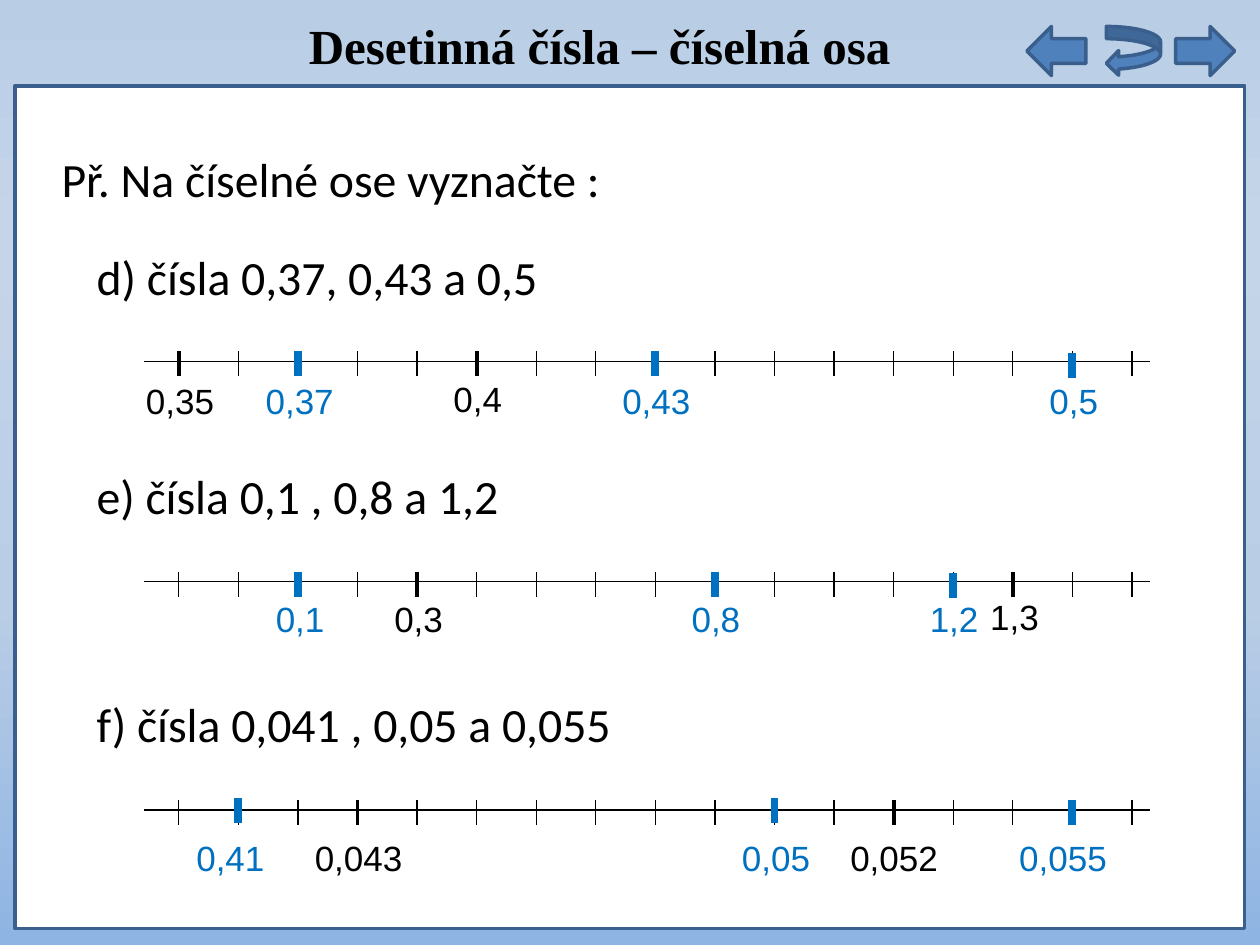
from typing import NamedTuple

from lxml.etree import SubElement
from pptx import Presentation
from pptx.dml.color import RGBColor
from pptx.enum.shapes import MSO_CONNECTOR, MSO_SHAPE
from pptx.enum.text import MSO_ANCHOR as Anchor, PP_ALIGN as Align
from pptx.oxml.ns import qn
from pptx.util import Pt

BLACK = RGBColor(0x00, 0x00, 0x00)
WHITE = RGBColor(0xFF, 0xFF, 0xFF)
ANSWER = RGBColor(0x00, 0x70, 0xC0)
BUTTON = RGBColor(0x4F, 0x81, 0xBD)
OUTLINE = RGBColor(0x3A, 0x5F, 0x8C)
BACKGROUND = ((0, "B9CDE5"), (25, "C5D5E9"), (64, "B9CDE5"), (100, "8EB4E3"))

AXIS_LEFT, AXIS_RIGHT = 82.1, 657.4
FIRST_TICK, TICK_STEP, TICK_COUNT = 102.2, 34.04, 17
TICK_ABOVE, TICK_BELOW = 5.8, 8.4
THIN, GIVEN_WIDTH, ANSWER_WIDTH = 0.75, 2.25, 4.5


class Mark(NamedTuple):
    tick: int
    label: str
    left: float
    width: float
    answer: bool = False
    lift: float = 0  # raises the label
    drop: float = 0  # lowers the tick


class Axis(NamedTuple):
    task: str
    task_top: float
    y: float
    label_top: float
    marks: tuple[Mark, ...]


AXES = (
    Axis("d) čísla 0,37, 0,43 a 0,5", 138.2, 206.6, 213.1, (
        Mark(0, "0,35", 76.3, 62.6),
        Mark(2, "0,37", 144.7, 62.6, True),
        Mark(5, "0,4", 252, 45.4, lift=0.9),
        Mark(8, "0,43", 348.5, 56.9, True),
        Mark(15, "0,5", 592.6, 51.1, True, drop=1),
    )),
    Axis("e) čísla 0,1 , 0,8 a 1,2", 263.5, 332.5, 337.8, (
        Mark(2, "0,1", 150.5, 51.1, True),
        Mark(4, "0,3", 218.2, 51.1),
        Mark(9, "0,8", 388.1, 56.9, True),
        Mark(13, "1,2", 524.2, 51.1, True, drop=0.7),
        Mark(14, "1,3", 558.7, 45.4, lift=0.9),
    )),
    Axis("f) čísla 0,041 , 0,05 a 0,055", 393.8, 462.9, 474.5, (
        Mark(1, "0,41", 105.1, 62.6, True, drop=-1.2),
        Mark(3, "0,043", 172.8, 67.7),
        Mark(10, "0,05", 416.9, 56.9, True, drop=-1.2),
        Mark(12, "0,052", 478.8, 67.7),
        Mark(15, "0,055", 575.3, 73.4, True),
    )),
)


def paint_background(s) -> None:
    """Fill the slide with a four-stop gradient running downwards."""
    fill = s.background.fill
    fill.gradient()
    fill.gradient_angle = 270
    stops = s.background._cSld.find(".//" + qn("a:gsLst"))
    stops.clear()
    for percent, color in BACKGROUND:
        stop = SubElement(stops, qn("a:gs"), pos=str(percent * 1000))
        SubElement(stop, qn("a:srgbClr"), val=color)


def add_shape(s, kind: MSO_SHAPE, left: float, top: float, width: float,
              height: float, color: RGBColor) -> None:
    sp = s.shapes.add_shape(kind, Pt(left), Pt(top), Pt(width), Pt(height))
    sp.shadow.inherit = False
    sp.fill.solid()
    sp.fill.fore_color.rgb = color
    sp.line.color.rgb = OUTLINE
    sp.line.width = Pt(2)


def add_line(s, x1: float, y1: float, x2: float, y2: float,
             color: RGBColor = BLACK, width: float = THIN) -> None:
    line = s.shapes.add_connector(MSO_CONNECTOR.STRAIGHT,
                                  Pt(x1), Pt(y1), Pt(x2), Pt(y2))
    line.line.color.rgb = color
    line.line.width = Pt(width)
    SubElement(line._element.spPr, qn("a:effectLst"))


def add_text(s, text: str, left: float, top: float, width: float,
             height: float, font: str = "Calibri", size: float = 27.3,
             color: RGBColor = BLACK, bold: bool = False,
             anchor: Anchor = Anchor.MIDDLE, align: Align = Align.LEFT,
             before: float = 0) -> None:
    sp = s.shapes.add_textbox(Pt(left), Pt(top), Pt(width), Pt(height))
    tf = sp.text_frame
    tf.word_wrap = True
    tf.vertical_anchor = anchor
    p = tf.paragraphs[0]
    p.text = text
    p.alignment = align
    p.space_before = Pt(before)
    p.font.name = font
    p.font.size = Pt(size)
    p.font.bold = bold
    p.font.color.rgb = color


def add_tick(s, y: float, index: int, color: RGBColor = BLACK,
             width: float = THIN) -> None:
    x = FIRST_TICK + index * TICK_STEP
    add_line(s, x, y - TICK_ABOVE, x, y + TICK_BELOW, color, width)


def add_axis(s, axis: Axis) -> None:
    """Draw a task with its number line, ticks and marked numbers."""
    add_text(s, axis.task, 48.2, axis.task_top, 311.8, 39.6)
    add_line(s, AXIS_LEFT, axis.y, AXIS_RIGHT, axis.y)
    for index in range(TICK_COUNT):
        add_tick(s, axis.y, index)
    for mark in axis.marks:
        color = ANSWER if mark.answer else BLACK
        width = ANSWER_WIDTH if mark.answer else GIVEN_WIDTH
        add_tick(s, axis.y + mark.drop, mark.tick, color, width)
        add_text(s, mark.label, mark.left, axis.label_top - mark.lift,
                 mark.width, 33.8, "Arial", 20, color,
                 anchor=Anchor.TOP, before=4)


def main() -> None:
    prs = Presentation()
    prs.slide_width, prs.slide_height = Pt(720), Pt(540)
    s = prs.slides.add_slide(prs.slide_layouts[6])
    paint_background(s)
    add_shape(s, MSO_SHAPE.RECTANGLE, 8.6, 49, 702.7, 481.7, WHITE)
    add_text(s, "Desetinná čísla – číselná osa", 36, -2.2, 613.4, 55.4,
             "Times New Roman", 28, bold=True, align=Align.CENTER)
    add_shape(s, MSO_SHAPE.LEFT_ARROW, 586.8, 15.1, 33.8, 28.1, BUTTON)
    add_shape(s, MSO_SHAPE.CURVED_LEFT_ARROW, 632.2, 15.1, 31, 28.1, BUTTON)
    add_shape(s, MSO_SHAPE.RIGHT_ARROW, 671.8, 15.1, 33.8, 28.1, BUTTON)
    add_text(s, "Př. Na číselné ose vyznačte :", 28.1, 82.1, 516.2, 39.6)
    for axis in AXES:
        add_axis(s, axis)
    prs.save("out.pptx")


if __name__ == "__main__":
    main()
